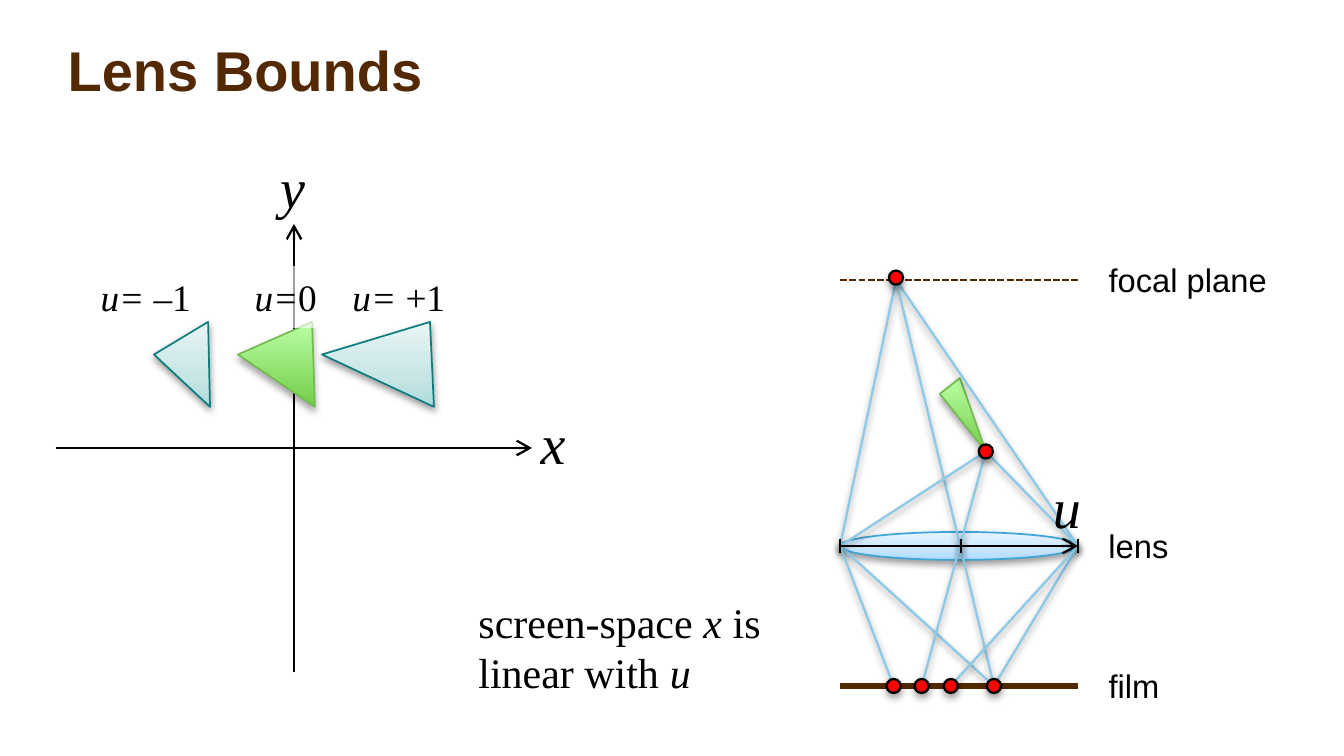
from dataclasses import dataclass

from lxml.etree import SubElement
from pptx import Presentation
from pptx.dml.color import RGBColor
from pptx.enum.dml import MSO_LINE
from pptx.enum.shapes import MSO_CONNECTOR, MSO_SHAPE
from pptx.enum.text import MSO_ANCHOR, MSO_AUTO_SIZE, PP_ALIGN
from pptx.oxml.ns import qn
from pptx.util import Pt


@dataclass(frozen=True)
class Theme:
    sans: str = "Arial"
    serif: str = "Times New Roman"
    brown: str = "532903"
    black: str = "000000"
    white: str = "FFFFFF"
    red: str = "FF0000"
    ray: str = "8ECAE7"
    teal_line: str = "0E7D7D"
    green_line: str = "74BB53"
    lens_line: str = "3EA5D6"
    teal: tuple = ((0, "AEDBDB"), (35, "C7E5E5"), (100, "E9F5F5"))
    green: tuple = ((0, "73CC48"), (100, "BBFFA6"))
    glass: tuple = ((0, "ADDBFF"), (35, "C5E5FF"), (100, "E9F5FF"))
    soft_shadow: tuple = (38, 1.6)
    deep_shadow: tuple = (35, 1.8)
    title_size: float = 24
    axis_size: float = 24
    note_size: float = 18
    value_size: float = 16
    label_size: float = 14


class SlideBuilder:
    def __init__(self, slide, theme):
        self.slide = slide
        self.shapes = slide.shapes
        self.theme = theme

    def effects(self, shape, shadow=None):
        effect_list = SubElement(shape._element.spPr, qn("a:effectLst"))
        if shadow:
            opacity, distance = shadow
            outer = SubElement(effect_list, qn("a:outerShdw"), blurRad=str(Pt(3.1)),
                               dist=str(Pt(distance)), dir="5400000", rotWithShape="0")
            color = SubElement(outer, qn("a:srgbClr"), val=self.theme.black)
            SubElement(color, qn("a:alpha"), val=str(opacity * 1000))

    def paint(self, shape, fill, line, width, shadow):
        if isinstance(fill, str):
            shape.fill.solid()
            shape.fill.fore_color.rgb = RGBColor.from_string(fill)
        else:
            shape.fill.gradient()
            shape.fill.gradient_angle = 90
            stops = shape._element.spPr.find(qn("a:gradFill")).find(qn("a:gsLst"))
            stops.clear()
            for position, color in fill:
                stop = SubElement(stops, qn("a:gs"), pos=str(position * 1000))
                SubElement(stop, qn("a:srgbClr"), val=color)
        shape.line.color.rgb = RGBColor.from_string(line)
        shape.line.width = Pt(width)
        self.effects(shape, shadow)

    def add_runs(self, paragraph, runs, size, font, color, bold=False):
        for text, italic in runs:
            run = paragraph.add_run()
            run.text = text
            run.font.name = font
            run.font.size = Pt(size)
            run.font.bold = bold
            run.font.italic = italic
            run.font.color.rgb = RGBColor.from_string(color)

    def title(self, text, left, top, width, height):
        title = self.shapes.title
        title.left, title.top, title.width, title.height = map(Pt, (left, top, width, height))
        frame = title.text_frame
        frame.vertical_anchor = MSO_ANCHOR.MIDDLE
        frame.auto_size = MSO_AUTO_SIZE.NONE
        frame.margin_left = frame.margin_right = Pt(6)
        frame.margin_top = frame.margin_bottom = Pt(3)
        paragraph = frame.paragraphs[0]
        paragraph.alignment = PP_ALIGN.LEFT
        self.add_runs(paragraph, [(text, False)], self.theme.title_size,
                      self.theme.sans, self.theme.brown, bold=True)

    def text(self, paragraphs, left, top, width, height, size, font, veil=None):
        box = self.shapes.add_textbox(*map(Pt, (left, top, width, height)))
        if veil:
            box.fill.solid()
            box.fill.fore_color.rgb = RGBColor.from_string(self.theme.white)
            color = box._element.spPr.find(qn("a:solidFill"))[0]
            SubElement(color, qn("a:alpha"), val=str(veil * 1000))
        frame = box.text_frame
        frame.word_wrap = False
        frame.auto_size = MSO_AUTO_SIZE.SHAPE_TO_FIT_TEXT
        for index, runs in enumerate(paragraphs):
            paragraph = frame.add_paragraph() if index else frame.paragraphs[0]
            self.add_runs(paragraph, runs, size, font, self.theme.black)

    def line(self, start, end, color, width=1, dash=None, arrow=False, shadow=None):
        connector = self.shapes.add_connector(MSO_CONNECTOR.STRAIGHT, *map(Pt, (*start, *end)))
        connector.line.color.rgb = RGBColor.from_string(color)
        connector.line.width = Pt(width)
        if dash:
            connector.line.dash_style = dash
        if arrow:
            SubElement(connector._element.spPr.find(qn("a:ln")), qn("a:tailEnd"), type="arrow")
        self.effects(connector, shadow)

    def ray(self, start, end):
        self.line(start, end, self.theme.ray, shadow=self.theme.soft_shadow)

    def triangle(self, points, fill, line, shadow):
        first, *others = [tuple(map(Pt, point)) for point in points]
        outline = self.shapes.build_freeform(*first)
        outline.add_line_segments(others, close=True)
        self.paint(outline.convert_to_shape(), fill, line, 0.75, shadow)

    def ellipse(self, center, width, height, fill, line, line_width, shadow):
        x, y = center
        shape = self.shapes.add_shape(
            MSO_SHAPE.OVAL, *map(Pt, (x - width / 2, y - height / 2, width, height)))
        self.paint(shape, fill, line, line_width, shadow)

    def dot(self, center):
        self.ellipse(center, 6, 6, self.theme.red, self.theme.black, 1, self.theme.deep_shadow)


def draw_screen_space(builder, theme):
    builder.line((24, 192), (228, 192), theme.black, arrow=True)
    builder.line((126, 288), (126, 96), theme.black, arrow=True)
    for name, left, top in (("x", 224.6, 171.5), ("y", 113, 62)):
        builder.text([[(name, True)]], left, top, 25.2, 36, theme.axis_size, theme.serif)

    teal = (theme.teal, theme.teal_line, theme.soft_shadow)
    green = (theme.green, theme.green_line, theme.deep_shadow)
    for left, peak, right, style in ((66, 89.2, 90, teal), (102, 133.8, 135, green),
                                     (138, 184.3, 186, teal)):
        builder.triangle(((left, 152), (peak, 138), (right, 174.4)), *style)

    for name, value, left, width, veil in (("u=", "0", 102, 41.8, 63),
                                           ("u= ", "–1", 36, 54, None),
                                           ("u= ", "+1", 144, 54.7, None)):
        builder.text([[(name, True), (value, False)]], left, 114, width, 26.6,
                     theme.value_size, theme.serif, veil)


def draw_lens_diagram(builder, theme):
    left, middle, right = 360, 411.8, 462
    focal_y, lens_y, film_y = 120, 234, 294
    lens_left, lens_right = (left, lens_y), (right, lens_y)
    focal_point, near_point = (384, focal_y), (422.5, 193.5)
    focus = (426, film_y)
    blur_left, blur_middle, blur_right = ((x, film_y) for x in (383, 395, 407.5))

    builder.ellipse(((left + right) / 2, lens_y), right - left, 12,
                    theme.glass, theme.lens_line, 0.75, theme.soft_shadow)
    builder.triangle((near_point, (402.8, 168.8), (411.4, 162)),
                     theme.green, theme.green_line, theme.deep_shadow)
    builder.line((left, focal_y), (right, focal_y), theme.brown, dash=MSO_LINE.SQUARE_DOT)
    builder.line((left, film_y), (right, film_y), theme.brown, 2.25)
    for label, top, width in (("film", 282, 36.7), ("lens", 222, 40.3),
                              ("focal plane", 108, 82.8)):
        builder.text([[(label, False)]], 468, top, width, 24.2, theme.label_size, theme.sans)

    for start, end in ((focal_point, lens_left), (focal_point, lens_right),
                       (focal_point, focus), (lens_left, focus), (focus, lens_right)):
        builder.ray(start, end)
    builder.dot((384, 119))
    builder.dot(focus)

    for start, end in ((near_point, lens_left), (near_point, lens_right),
                       (near_point, blur_middle), (lens_left, blur_left),
                       (blur_right, lens_right)):
        builder.ray(start, end)
    for center in (blur_right, blur_left, blur_middle, near_point):
        builder.dot(center)

    builder.line(lens_left, lens_right, theme.black, arrow=True)
    builder.text([[("u", True)]], 444.2, 199, 26.6, 36, theme.axis_size, theme.serif)
    for x in (left, middle, right):
        builder.line((x, lens_y - 3), (x, lens_y + 3), theme.black, shadow=theme.soft_shadow)


def main():
    presentation = Presentation()
    presentation.slide_width, presentation.slide_height = Pt(576), Pt(324)
    theme = Theme()
    slide = presentation.slides.add_slide(presentation.slide_layouts[5])
    builder = SlideBuilder(slide, theme)
    builder.title("Lens Bounds", 23, 12.4, 500, 34.6)
    draw_screen_space(builder, theme)
    draw_lens_diagram(builder, theme)
    builder.text([[("screen-space ", False), ("x ", True), ("is", False)],
                  [("linear with ", False), ("u", True)]],
                 198, 252, 136.8, 51, theme.note_size, theme.serif)
    presentation.save("out.pptx")


if __name__ == "__main__":
    main()
